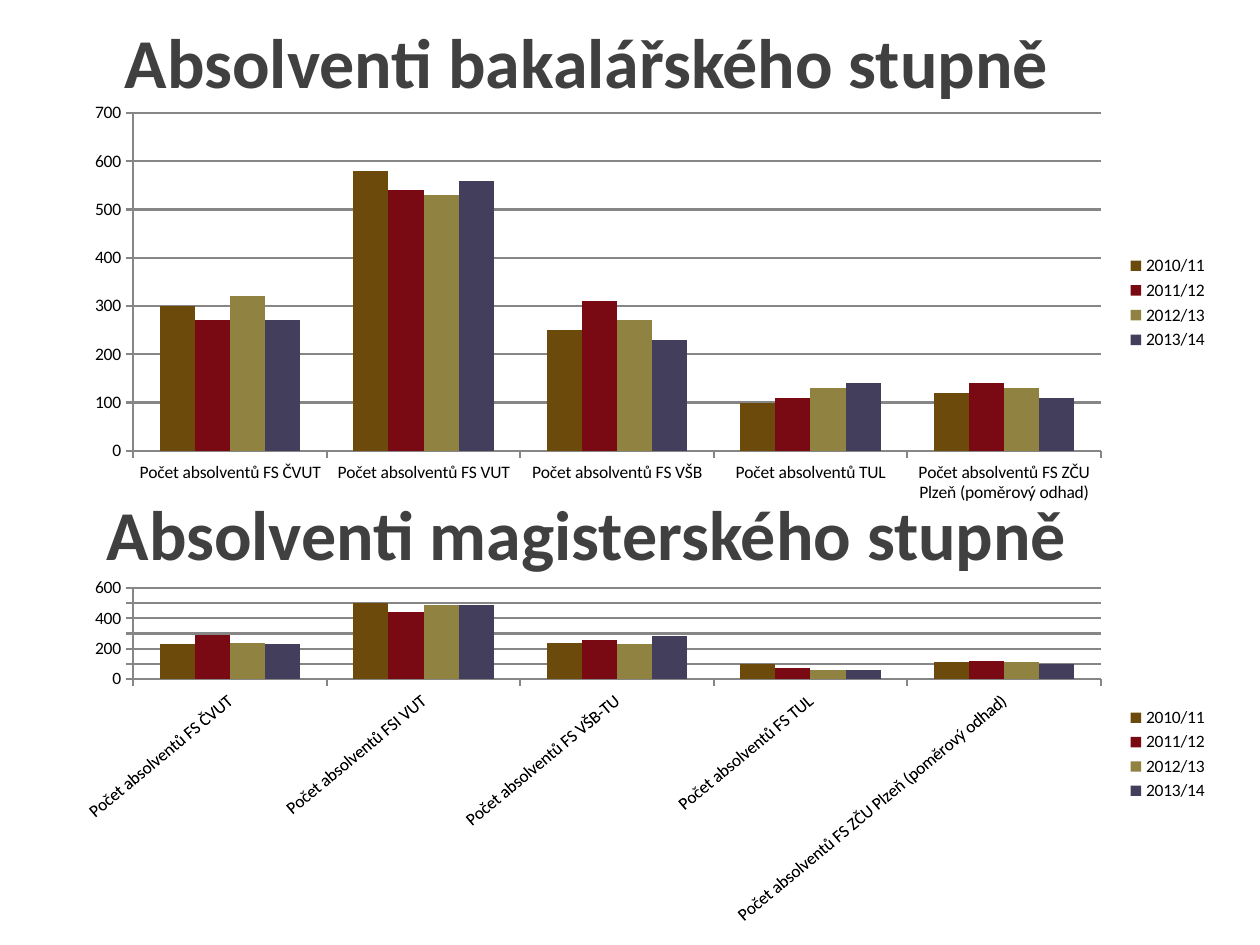
from dataclasses import dataclass

from pptx import Presentation
from pptx.chart.data import CategoryChartData
from pptx.dml.color import RGBColor as RGB
from pptx.enum.chart import XL_CHART_TYPE as ChartType
from pptx.enum.chart import XL_LEGEND_POSITION as LegendPos
from pptx.enum.chart import XL_TICK_MARK as Tick
from pptx.enum.text import MSO_ANCHOR as Anchor
from pptx.enum.text import MSO_AUTO_SIZE as AutoSize
from pptx.enum.text import PP_ALIGN as Align
from pptx.oxml import parse_xml
from pptx.oxml.ns import nsdecls
from pptx.util import Cm, Pt


@dataclass(frozen=True)
class Theme:
    font: str = "Calibri"
    title_size: float = 40
    title_leading: float = 52
    chart_size: float = 10
    title: str = "404040"
    text: str = "000000"
    line: str = "868686"
    line_width: float = 1.25
    series: tuple[str, ...] = ("6B4A0B", "790A14", "908342", "423E5C")


@dataclass(frozen=True)
class Box:
    left: float
    top: float
    width: float
    height: float

    def lengths(self) -> tuple:
        return Cm(self.left), Cm(self.top), Cm(self.width), Cm(self.height)


@dataclass(frozen=True)
class Panel:
    title: str
    title_box: Box
    chart_box: Box
    plot_percent: Box
    maximum: int
    label_angle: int
    rows: dict[str, tuple[int, ...]]


THEME = Theme()
YEARS = ("2010/11", "2011/12", "2012/13", "2013/14")
LEFT, TITLE_W, TITLE_H, CHART_W = 1.45, 20.75, 1.52, 23.16
PLOT_X, PLOT_W = 5.35, 84.2

PANELS = (
    Panel(
        "Absolventi bakalářského stupně",
        Box(LEFT, 0.38, TITLE_W, TITLE_H),
        Box(LEFT, 1.9, CHART_W, 8.41),
        Box(PLOT_X, 4.5, PLOT_W, 81),
        700,
        0,
        {
            "Počet absolventů FS ČVUT": (300, 270, 320, 270),
            "Počet absolventů FS VUT": (580, 540, 530, 560),
            "Počet absolventů FS VŠB": (250, 310, 270, 230),
            "Počet absolventů TUL": (100, 110, 130, 140),
            "Počet absolventů FS ZČU Plzeň (poměrový odhad)": (120, 140, 130, 110),
        },
    ),
    Panel(
        "Absolventi magisterského stupně",
        Box(LEFT, 9.91, TITLE_W, TITLE_H),
        Box(LEFT, 11.66, CHART_W, 7),
        Box(PLOT_X, 1.5, PLOT_W, 26.5),
        600,
        -40,
        {
            "Počet absolventů FS ČVUT": (230, 290, 240, 230),
            "Počet absolventů FSI VUT": (500, 440, 490, 490),
            "Počet absolventů FS VŠB-TU": (240, 260, 230, 280),
            "Počet absolventů FS TUL": (100, 70, 60, 60),
            "Počet absolventů FS ZČU Plzeň (poměrový odhad)": (110, 120, 110, 100),
        },
    ),
)


def set_attrs(obj, values: dict) -> None:
    for name, value in values.items():
        setattr(obj, name, value)


def style_font(font, size: float, color: str, bold: bool) -> None:
    set_attrs(font, {"name": THEME.font, "size": Pt(size), "bold": bold})
    font.color.rgb = RGB.from_string(color)


def style_line(line) -> None:
    line.color.rgb = RGB.from_string(THEME.line)
    line.width = Pt(THEME.line_width)


def fill_title(sp, panel: Panel) -> None:
    left, top, width, height = panel.title_box.lengths()
    set_attrs(sp, {"left": left, "top": top, "width": width, "height": height})
    tf = sp.text_frame
    set_attrs(tf, {"word_wrap": True, "auto_size": AutoSize.NONE,
                   "vertical_anchor": Anchor.MIDDLE})
    p = tf.paragraphs[0]
    set_attrs(p, {"alignment": Align.CENTER, "line_spacing": Pt(THEME.title_leading)})
    r = p.add_run()
    r.text = panel.title
    style_font(r.font, THEME.title_size, THEME.title, True)


def place_plot(chart, percent: Box) -> None:
    area = chart.plots[0]._element.getparent()
    for old in area.findall("{*}layout"):
        area.remove(old)
    sizes = {"x": percent.left, "y": percent.top,
             "w": percent.width, "h": percent.height}
    modes = "".join(f'<c:{k}Mode val="edge"/>' for k in "xy")
    values = "".join(f'<c:{k} val="{v / 100:.4f}"/>' for k, v in sizes.items())
    area.insert(0, parse_xml(
        f'<c:layout {nsdecls("c")}><c:manualLayout><c:layoutTarget val="inner"/>'
        f"{modes}{values}</c:manualLayout></c:layout>"))


def add_column_chart(s, panel: Panel) -> None:
    data = CategoryChartData()
    data.categories = list(panel.rows)
    for year, values in zip(YEARS, zip(*panel.rows.values())):
        data.add_series(year, values)
    chart = s.shapes.add_chart(
        ChartType.COLUMN_CLUSTERED, *panel.chart_box.lengths(), data).chart
    set_attrs(chart, {"has_title": False, "has_legend": True})
    style_font(chart.font, THEME.chart_size, THEME.text, False)
    set_attrs(chart.legend, {"position": LegendPos.RIGHT, "include_in_layout": False})

    plot = chart.plots[0]
    set_attrs(plot, {"gap_width": 150, "overlap": 0, "vary_by_categories": False})
    for series, color in zip(plot.series, THEME.series):
        series.format.fill.solid()
        series.format.fill.fore_color.rgb = RGB.from_string(color)

    cat, val = chart.category_axis, chart.value_axis
    set_attrs(val, {"minimum_scale": 0, "maximum_scale": panel.maximum,
                    "major_unit": 100, "has_major_gridlines": True})
    style_line(val.major_gridlines.format.line)
    for axis in (cat, val):
        axis.major_tick_mark = Tick.OUTSIDE
        style_line(axis.format.line)
        style_font(axis.tick_labels.font, THEME.chart_size, THEME.text, False)
    if panel.label_angle:
        body = cat._element.find("{*}txPr/{*}bodyPr")
        body.set("rot", str(panel.label_angle * 60000))
        body.set("vert", "horz")
    place_plot(chart, panel.plot_percent)


def main() -> None:
    prs = Presentation()
    prs.slide_width, prs.slide_height = Cm(25.4), Cm(19.05)
    s = prs.slides.add_slide(prs.slide_layouts[5])
    first, second = PANELS
    fill_title(s.shapes.title, first)
    fill_title(s.shapes.add_textbox(*second.title_box.lengths()), second)
    for panel in PANELS:
        add_column_chart(s, panel)
    prs.save("out.pptx")


if __name__ == "__main__":
    main()
